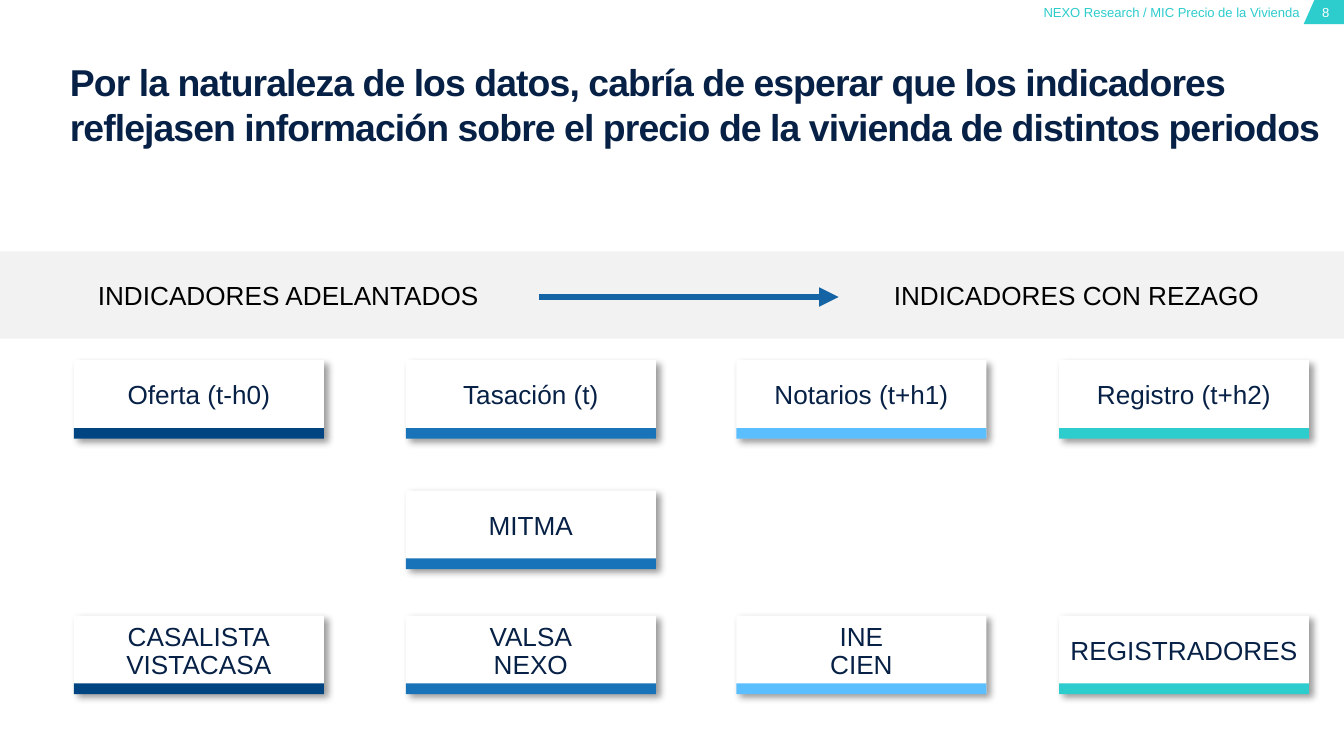
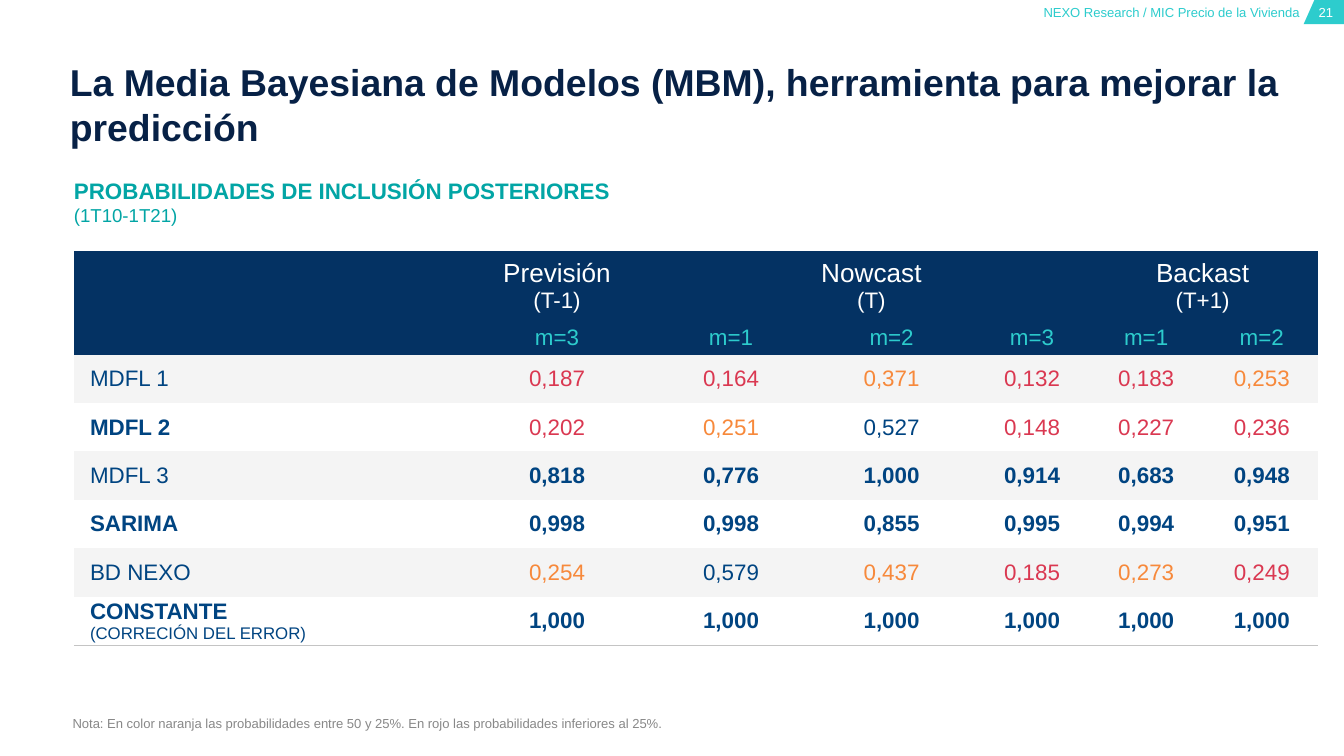
"""Build two slides on house price indicators and model averaging."""
from lxml.etree import SubElement
from pptx import Presentation
from pptx.dml.color import RGBColor
from pptx.enum.shapes import MSO_CONNECTOR, MSO_SHAPE
from pptx.enum.text import MSO_ANCHOR, PP_ALIGN
from pptx.oxml import parse_xml
from pptx.oxml.ns import nsdecls, qn
from pptx.util import Inches, Pt

WIDE, TALL = Inches(10), Inches(5.625)
UNIT = WIDE / 100
FONT = "Arial"
HUES = {
    "white": "FFFFFF", "black": "000000", "ink": "072146", "head": "043263",
    "navy": "004481", "blue": "1973B8", "sky": "5BBEFF", "aqua": "2DCCCD",
    "teal": "02A5A5", "arrow": "1464A5", "band": "F2F2F2", "stripe": "F4F4F4",
    "note": "888888", "red": "DA3851", "orange": "F7893B", "rule": "C4C4C4",
}
LEFT, MID, RIGHT = PP_ALIGN.LEFT, PP_ALIGN.CENTER, PP_ALIGN.RIGHT

CARDS = [
    (5.5, "navy", {26.8: ["Oferta (t-h0)"], 45.8: ["CASALISTA", "VISTACASA"]}),
    (30.2, "blue", {26.8: ["Tasación (t)"], 36.5: ["MITMA"],
                    45.8: ["VALSA", "NEXO"]}),
    (54.8, "sky", {26.8: ["Notarios (t+h1)"], 45.8: ["INE", "CIEN"]}),
    (78.8, "aqua", {26.8: ["Registro (t+h2)"], 45.8: ["REGISTRADORES"]}),
]
COLS = [28.6, 14.7, 11.2, 12.7, 8.2, 8.8, 8.4]
ROWS = [5.1, 2.6] + [3.6] * 6
HEADS = {1: ("Previsión", "(T-1)", 1), 2: ("Nowcast", "(T)", 3),
         5: ("Backast", "(T+1)", 2)}
MONTHS = ["m=3", "m=1", "m=2", "m=3", "m=1", "m=2"]
ODDS = {
    "MDFL 1": [0.187, 0.164, 0.371, 0.132, 0.183, 0.253],
    "MDFL 2": [0.202, 0.251, 0.527, 0.148, 0.227, 0.236],
    "MDFL 3": [0.818, 0.776, 1, 0.914, 0.683, 0.948],
    "SARIMA": [0.998, 0.998, 0.855, 0.995, 0.994, 0.951],
    "BD NEXO": [0.254, 0.579, 0.437, 0.185, 0.273, 0.249],
    "CONSTANTE": [1] * 6,
}


def grid(*cells):
    """Turn grid cells into slide lengths."""
    return [round(cell * UNIT) for cell in cells]


def tint(name):
    """Look up a colour by name."""
    return RGBColor.from_string(HUES[name])


def write(frame, lines, side=LEFT, space=None):
    """Write lines of (text, size, hue, bold) into a text frame."""
    frame.word_wrap = True
    for spot, (text, size, hue, bold) in enumerate(lines):
        para = frame.add_paragraph() if spot else frame.paragraphs[0]
        para.text = text
        para.alignment = side
        para.line_spacing = space
        font = para.font
        font.name, font.size, font.bold = FONT, Pt(size), bold
        font.color.rgb = tint(hue)


def label(slide, area, lines, side=LEFT, anchor=MSO_ANCHOR.TOP, space=None):
    """Add a text box without margins and return its frame."""
    frame = slide.shapes.add_textbox(*grid(*area)).text_frame
    frame.margin_left = frame.margin_right = 0
    frame.margin_top = frame.margin_bottom = 0
    frame.vertical_anchor = anchor
    write(frame, lines, side, space)
    return frame


def paint(shape, hue):
    """Give a shape a flat fill, no line and no shadow."""
    shape.shadow.inherit = False
    shape.fill.solid()
    shape.fill.fore_color.rgb = tint(hue)
    shape.line.fill.background()
    return shape


def block(shapes, area, hue):
    """Add a flat rectangle."""
    return paint(shapes.add_shape(MSO_SHAPE.RECTANGLE, *grid(*area)), hue)


def shade(shape):
    """Cast a soft shadow down and to the right."""
    glow = shape._element.spPr.find(qn("a:effectLst"))
    cast = SubElement(glow, qn("a:outerShdw"), blurRad=str(Pt(4)),
                      dist=str(Pt(3)), dir="2700000", algn="tl", rotWithShape="0")
    hue = SubElement(cast, qn("a:srgbClr"), val=HUES["black"])
    SubElement(hue, qn("a:alpha"), val="40000")


def card(slide, left, top, hue, names):
    """Add a white card with a coloured foot and a centred label."""
    group = slide.shapes.add_group_shape()
    shade(block(group.shapes, (left, top, 18.6, 5.8), "white"))
    block(group.shapes, (left, top + 5.05, 18.6, 0.8), hue)
    high = 2.1 * len(names)
    label(slide, (left, top + 2.7 - high / 2, 18.6, high),
          [(name, 14, "ink", False) for name in names], MID, space=0.9)


def arrow(slide, start, end, level):
    """Draw a level arrow."""
    left, right, high = grid(start, end, level)
    line = slide.shapes.add_connector(
        MSO_CONNECTOR.STRAIGHT, left, high, right, high)
    line.line.color.rgb = tint("arrow")
    line.line.width = Pt(3.5)
    SubElement(line.line._get_or_add_ln(), qn("a:tailEnd"), type="triangle")
    SubElement(line._element.spPr, qn("a:effectLst"))


def page(deck, number, title, tight=0):
    """Add a slide with its corner tab, running head and title."""
    slide = deck.slides.add_slide(deck.slide_layouts[6])
    tab = slide.shapes.build_freeform(978, 0, scale=UNIT / 10)
    tab.add_line_segments([(1000, 0), (1000, 18), (970, 18)])
    paint(tab.convert_to_shape(), "aqua")
    label(slide, (97.5, 0.3, 2.3, 1.2), [(str(number), 7, "white", False)], MID)
    label(slide, (77, 0.3, 19.7, 1.2),
          [("NEXO Research / MIC Precio de la Vivienda", 7, "aqua", False)], RIGHT)
    frame = label(slide, (5.2, 4.4, 93, 3.7), [(title, 20, "ink", True)],
                  space=Pt(24))
    if tight:
        font = frame.paragraphs[0]._p.pPr.find(qn("a:defRPr"))
        font.set("spc", str(tight))
    return slide


def fill(cell, lines, hue=None, side=MID, inset=0):
    """Write and colour one table cell."""
    cell.margin_left, cell.margin_right = grid(inset, 0)
    cell.margin_top = cell.margin_bottom = 0
    cell.vertical_anchor = MSO_ANCHOR.MIDDLE
    if hue:
        cell.fill.solid()
        cell.fill.fore_color.rgb = tint(hue)
    else:
        cell.fill.background()
    write(cell.text_frame, lines, side)


def rule(cell):
    """Draw a thin line below a cell."""
    cell._tc.get_or_add_tcPr().insert(0, parse_xml(
        f'<a:lnB {nsdecls("a")} w="{Pt(0.5)}"><a:solidFill>'
        f'<a:srgbClr val="{HUES["rule"]}"/></a:solidFill></a:lnB>'))


def rate(odd):
    """Format a probability and pick its colour and weight."""
    hue = "red" if odd < 0.25 else "orange" if odd < 0.5 else "navy"
    return f"{odd:.3f}".replace(".", ","), 12, hue, odd > 0.6


def table(slide):
    """Add the table of inclusion probabilities."""
    frame = slide.shapes.add_table(
        len(ROWS), len(COLS), *grid(5.5, 18.7, sum(COLS), sum(ROWS)))
    odds = frame.table
    odds.first_row = odds.horz_banding = False
    odds._tbl.tblPr.find(qn("a:tableStyleId")).text = (
        "{2D5ABB26-0587-4C30-8999-92F81FD0307C}")
    for col, wide in zip(odds.columns, grid(*COLS)):
        col.width = wide
    for row, high in zip(odds.rows, grid(*ROWS)):
        row.height = high
    for col, month in enumerate([""] + MONTHS):
        fill(odds.cell(0, col), [("", 12, "white", False)], "head")
        fill(odds.cell(1, col), [(month, 12, "aqua", False)], "head")
    for col, (name, time, span) in HEADS.items():
        cell = odds.cell(0, col)
        if span > 1:
            cell.merge(odds.cell(0, col + span - 1))
        fill(cell, [(name, 14, "white", False), (time, 12, "white", False)], "head")
    for row, (name, line) in enumerate(ODDS.items(), 2):
        hue = None if row % 2 else "stripe"
        names = [(name, 12, "navy", bool(row % 2))]
        if name == "CONSTANTE":
            names.append(("(CORRECIÓN DEL ERROR)", 9, "navy", False))
        fill(odds.cell(row, 0), names, hue, LEFT, 1.2)
        for col, odd in enumerate(line, 1):
            fill(odds.cell(row, col), [rate(odd)], hue)
    for col in range(len(COLS)):
        rule(odds.cell(len(ROWS) - 1, col))


def signs(deck):
    """Build the slide of leading and lagging indicators."""
    slide = page(deck, 8, "Por la naturaleza de los datos, cabría de esperar que "
                 "los indicadores reflejasen información sobre el precio de la "
                 "vivienda de distintos periodos", -50)
    block(slide.shapes, (0, 18.7, 100, 6.5), "band")
    arrow(slide, 40.1, 62.4, 22.1)
    for left, wide, text in ((6, 30.9, "INDICADORES ADELANTADOS"),
                             (63.1, 34, "INDICADORES CON REZAGO")):
        label(slide, (left, 18.7, wide, 6.5), [(text, 14, "black", False)],
              MID, MSO_ANCHOR.MIDDLE)
    for left, hue, stack in CARDS:
        for top, names in stack.items():
            card(slide, left, top, hue, names)


def model(deck):
    """Build the slide of Bayesian model averaging."""
    slide = page(deck, 21, "La Media Bayesiana de Modelos (MBM), herramienta "
                 "para mejorar la predicción")
    label(slide, (5.5, 13.2, 83.5, 2.8), [
        ("PROBABILIDADES DE INCLUSIÓN POSTERIORES", 12, "teal", True),
        ("(1T10-1T21)", 10, "teal", False)])
    label(slide, (5.4, 52.2, 78.7, 2.2), [
        ("Nota: En color naranja las probabilidades entre 50 y 25%. En rojo las "
         "probabilidades inferiores al 25%.", 7, "note", False)],
        anchor=MSO_ANCHOR.BOTTOM)
    table(slide)


def main():
    """Build and save the deck."""
    deck = Presentation()
    deck.slide_width, deck.slide_height = WIDE, TALL
    signs(deck)
    model(deck)
    deck.save("out.pptx")


if __name__ == "__main__":
    main()
